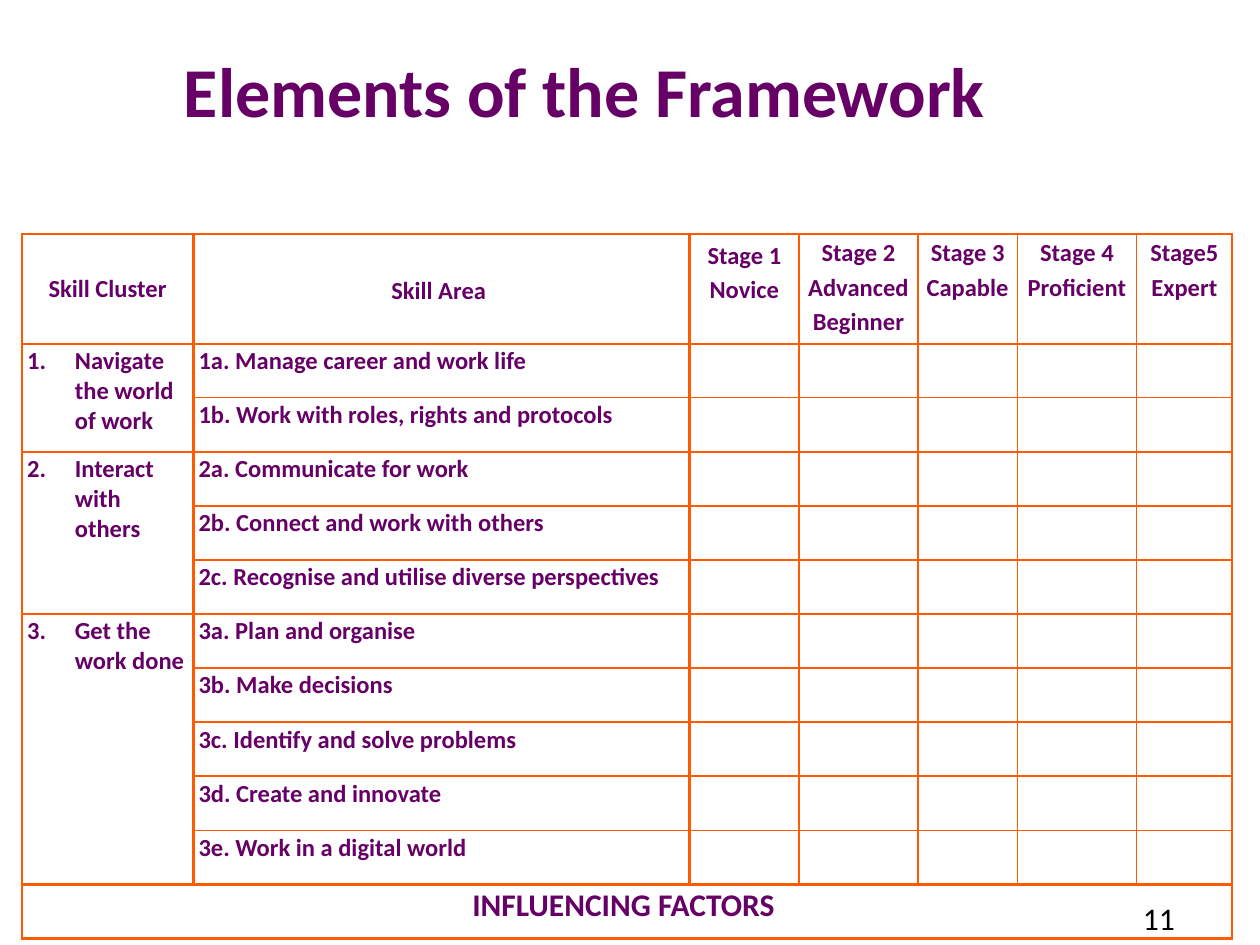
"""Builds the slide that sets out the elements of a work skills framework as a table."""
from dataclasses import dataclass
from itertools import product

from lxml.etree import SubElement
from pptx import Presentation
from pptx.dml.color import RGBColor
from pptx.enum.text import MSO_ANCHOR as Anchor, PP_ALIGN as Align
from pptx.oxml.ns import qn
from pptx.util import Pt

FONT = "Calibri"
PURPLE = "660066"
ORANGE = "FF5A00"
BLACK = "000000"
THICK, THIN = 1.5, 1

TABLE_LEFT, TABLE_TOP = 12.5, 133.8
COLUMN_WIDTHS = [98, 283.6, 62.6, 67.8, 57, 68, 54.8]
HEADER_HEIGHT, ROW_HEIGHT = 62.6, 30.9
SIDE_MARGIN, EDGE_MARGIN = 3, 1.5
CLUSTER_INDENT = 27.3


@dataclass(frozen=True)
class Style:
    size: float
    bold: bool = True
    color: str = PURPLE
    align: Align = Align.LEFT
    anchor: Anchor = Anchor.TOP
    line_spacing: float = 1.0
    hanging: float = 0


@dataclass(frozen=True)
class Cluster:
    name: str
    areas: tuple[str, ...]


TITLE = Style(40, align=Align.CENTER, anchor=Anchor.BOTTOM)
PAGE_NUMBER = Style(18, bold=False, color=BLACK)
CLUSTER_HEADER = Style(14, align=Align.CENTER, anchor=Anchor.MIDDLE)
AREA_HEADER = Style(14, align=Align.CENTER, anchor=Anchor.MIDDLE, line_spacing=1.15)
STAGE_HEADER = Style(14, align=Align.CENTER, line_spacing=1.15)
CLUSTER_NAME = Style(14, hanging=CLUSTER_INDENT)
SKILL_AREA = Style(14)
FOOTER = Style(18, align=Align.CENTER)

STAGES = [
    "Stage 1\nNovice",
    "Stage 2\nAdvanced Beginner",
    "Stage 3\nCapable",
    "Stage 4\nProficient",
    "Stage5\nExpert",
]
CLUSTERS = [
    Cluster("1.\tNavigate the world of work", (
        "1a. Manage career and work life",
        "1b. Work with roles, rights and protocols",
    )),
    Cluster("2.\tInteract with others", (
        "2a. Communicate for work",
        "2b. Connect and work with others",
        "2c. Recognise and utilise diverse perspectives",
    )),
    Cluster("3.\tGet the work done", (
        "3a. Plan and organise",
        "3b. Make decisions",
        "3c. Identify and solve problems",
        "3d. Create and innovate",
        "3e. Work in a digital world",
    )),
]


def rgb(color: str) -> RGBColor:
    return RGBColor.from_string(color)


def write(text_frame, text: str, style: Style) -> None:
    text_frame.text = text
    text_frame.word_wrap = True
    for paragraph in text_frame.paragraphs:
        paragraph.alignment = style.align
        paragraph.line_spacing = style.line_spacing
        if style.hanging:
            properties = paragraph._p.get_or_add_pPr()
            properties.set("marL", str(Pt(style.hanging)))
            properties.set("indent", str(-Pt(style.hanging)))
        for run in paragraph.runs:
            run.font.name = FONT
            run.font.size = Pt(style.size)
            run.font.bold = style.bold
            run.font.color.rgb = rgb(style.color)


def add_text(slide, left: float, top: float, width: float, height: float,
             text: str, style: Style) -> None:
    box = slide.shapes.add_textbox(Pt(left), Pt(top), Pt(width), Pt(height))
    write(box.text_frame, text, style)
    box.text_frame.vertical_anchor = style.anchor


def fill_cell(cell, text: str, style: Style, edge_margin: float = EDGE_MARGIN) -> None:
    write(cell.text_frame, text, style)
    cell.vertical_anchor = style.anchor
    cell.margin_left = cell.margin_right = Pt(SIDE_MARGIN)
    cell.margin_top = cell.margin_bottom = Pt(edge_margin)


def set_borders(cell, left: float, right: float, top: float, bottom: float) -> None:
    properties = cell._tc.get_or_add_tcPr()
    for tag, width in zip(("lnL", "lnR", "lnT", "lnB"), (left, right, top, bottom)):
        line = SubElement(properties, qn(f"a:{tag}"), w=str(Pt(width)))
        solid_fill = SubElement(line, qn("a:solidFill"))
        SubElement(solid_fill, qn("a:srgbClr"), val=ORANGE)


def weight(edge: int, thick_edges: set[int]) -> float:
    return THICK if edge in thick_edges else THIN


def add_framework_table(slide) -> None:
    row_count = 2 + sum(len(cluster.areas) for cluster in CLUSTERS)
    column_count = len(COLUMN_WIDTHS)
    last_row, last_column = row_count - 1, column_count - 1
    heights = [HEADER_HEIGHT] + [ROW_HEIGHT] * last_row
    table = slide.shapes.add_table(
        row_count, column_count, Pt(TABLE_LEFT), Pt(TABLE_TOP),
        Pt(sum(COLUMN_WIDTHS)), Pt(sum(heights))).table
    table.first_row = table.horz_banding = False
    for column, width in zip(table.columns, COLUMN_WIDTHS):
        column.width = Pt(width)
    for row, height in zip(table.rows, heights):
        row.height = Pt(height)

    fill_cell(table.cell(0, 0), "Skill Cluster", CLUSTER_HEADER)
    fill_cell(table.cell(0, 1), "Skill Area ", AREA_HEADER)
    for index, stage in enumerate(STAGES):
        fill_cell(table.cell(0, index + 2), stage, STAGE_HEADER, 0 if index else EDGE_MARGIN)

    start = 1
    thick_rows = {0, start, row_count}
    for cluster in CLUSTERS:
        end = start + len(cluster.areas)
        table.cell(start, 0).merge(table.cell(end - 1, 0))
        fill_cell(table.cell(start, 0), cluster.name, CLUSTER_NAME)
        for row, area in enumerate(cluster.areas, start):
            fill_cell(table.cell(row, 1), area, SKILL_AREA)
        thick_rows.add(end)
        start = end
    table.cell(last_row, 0).merge(table.cell(last_row, last_column))
    fill_cell(table.cell(last_row, 0), "INFLUENCING FACTORS ", FOOTER)

    thick_columns = {0, 1, 2, column_count}
    for row, column in product(range(row_count), range(column_count)):
        cell = table.cell(row, column)
        if cell.is_merge_origin:
            set_borders(cell, THICK, THICK, THICK, THICK)
        elif not cell.is_spanned:
            set_borders(cell, weight(column, thick_columns), weight(column + 1, thick_columns),
                        weight(row, thick_rows), weight(row + 1, thick_rows))
        cell.fill.background()


def main() -> None:
    presentation = Presentation()
    presentation.slide_width, presentation.slide_height = Pt(720), Pt(540)
    slide = presentation.slides.add_slide(presentation.slide_layouts[6])
    add_text(slide, 28, 16.5, 612, 62, "Elements of the Framework", TITLE)
    add_framework_table(slide)
    add_text(slide, 646, 510, 57.6, 21.6, "11", PAGE_NUMBER)
    presentation.save("out.pptx")


if __name__ == "__main__":
    main()
